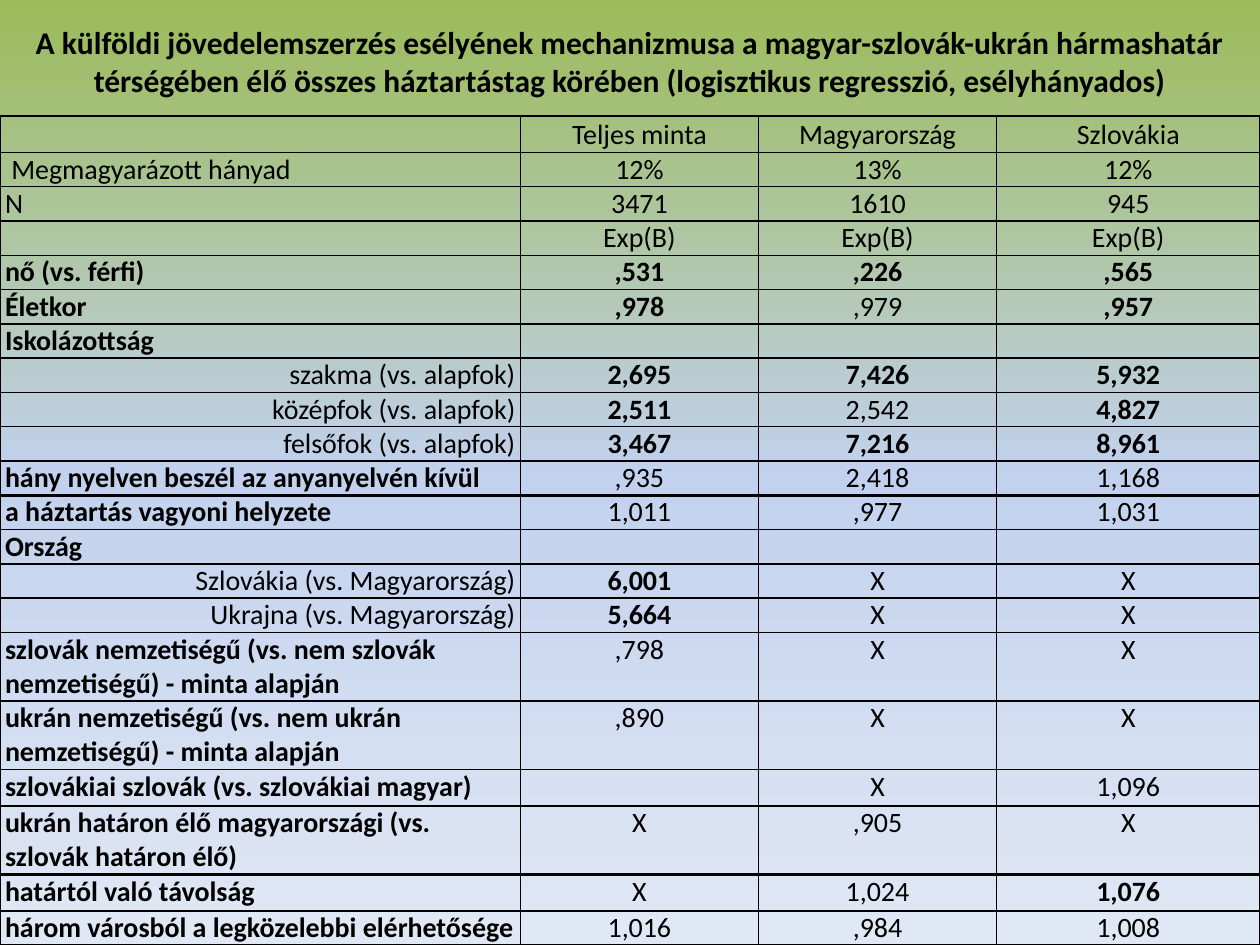
from copy import deepcopy
from lxml.etree import SubElement as Sub
from pptx import Presentation
from pptx.dml.color import RGBColor
from pptx.enum.text import MSO_ANCHOR as Anchor, PP_ALIGN as Align
from pptx.oxml.ns import qn
from pptx.util import Inches, Pt

BLACK = RGBColor(0, 0, 0)
GREEN = RGBColor(0x9B, 0xBB, 0x59)
BLUE = RGBColor(0xC2, 0xD1, 0xED)
PALE = RGBColor(0xE1, 0xE8, 0xF5)
FONT = "Calibri"
WIDE, HIGH = Inches(10), Inches(7.5)
COLS = [0.413, 0.189, 0.189, 0.209]
LINE = 0.27
HEADS = 4
TALL = {0: 0.29, 15: 0.54, 16: 0.54, 17: 0.29, 18: 0.54, 19: 0.29}
THICK = {10, 18}
BOLD, RIGHT = "*", ">"

TITLE = ("A külföldi jövedelemszerzés esélyének mechanizmusa a "
         "magyar-szlovák-ukrán hármashatár térségében élő összes "
         "háztartástag körében (logisztikus regresszió, esélyhányados)")

ROWS = [
    "|Teljes minta|Magyarország|Szlovákia",
    " Megmagyarázott hányad|12%|13%|12%",
    "N|3471|1610|945",
    "|Exp(B)|Exp(B)|Exp(B)",
    "*nő (vs. férfi)|*,531|*,226|*,565",
    "*Életkor|*,978|,979|*,957",
    "*Iskolázottság|||",
    ">szakma (vs. alapfok)|*2,695|*7,426|*5,932",
    ">középfok (vs. alapfok)|*2,511|2,542|*4,827",
    ">felsőfok (vs. alapfok)|*3,467|*7,216|*8,961",
    "*hány nyelven beszél az anyanyelvén kívül|,935|2,418|1,168",
    "*a háztartás vagyoni helyzete|1,011|,977|1,031",
    "*Ország|||",
    ">Szlovákia (vs. Magyarország)|*6,001|X|X",
    ">Ukrajna (vs. Magyarország)|*5,664|X|X",
    "*szlovák nemzetiségű (vs. nem szlovák nemzetiségű) - minta alapján|,798|X|X",
    "*ukrán nemzetiségű (vs. nem ukrán nemzetiségű) - minta alapján|,890|X|X",
    "*szlovákiai szlovák (vs. szlovákiai magyar)||X|1,096",
    "*ukrán határon élő magyarországi (vs. szlovák határon élő)|X|,905|X",
    "*határtól való távolság|X|1,024|*1,076",
    "*három városból a legközelebbi elérhetősége|1,016|,984|1,008",
]


def paint(slide):
    fill = slide.background.fill
    fill.gradient()
    fill.gradient_angle = 270
    stops = slide.element.find(".//" + qn("a:gsLst"))
    stops.append(deepcopy(stops[0]))
    for i, (stop, tint) in enumerate(zip(fill.gradient_stops, (GREEN, BLUE, PALE))):
        stop.position = i / 2
        stop.color.rgb = tint


def style(par, size, bold, align):
    par.alignment = align
    font = par.font
    font.name, font.size, font.bold = FONT, Pt(size), bold
    font.color.rgb = BLACK


def head(slide, x, y, w, h):
    box = slide.shapes.title
    box.left, box.top, box.width, box.height = x, y, w, h
    frame = box.text_frame
    frame.word_wrap = True
    frame.vertical_anchor = Anchor.MIDDLE
    frame.text = TITLE
    style(frame.paragraphs[0], 18, True, Align.CENTER)


def edge(cell, row):
    props = cell._tc.get_or_add_tcPr()
    heavy = {"T": row - 1 in THICK, "B": row in THICK}
    for side in "LRTB":
        wide = Pt(2.25 if heavy.get(side) else 1)
        line = Sub(props, qn("a:ln" + side), w=str(int(wide)))
        Sub(Sub(line, qn("a:solidFill")), qn("a:srgbClr"), val=str(BLACK))
    cell.fill.background()


def write(cell, text, row, col):
    cell.margin_left = cell.margin_right = Inches(0.04)
    cell.margin_top = cell.margin_bottom = 0
    cell.vertical_anchor = Anchor.BOTTOM if row < HEADS else Anchor.TOP
    align = Align.CENTER if col else Align.LEFT
    if text.startswith(RIGHT):
        align = Align.RIGHT
    cell.text = text.lstrip(BOLD + RIGHT)
    par = cell.text_frame.paragraphs[0]
    style(par, 16, text.startswith(BOLD), align)
    if not text:
        Sub(par._p, qn("a:endParaRPr"), sz="1600")


def grid(slide, x, y, w):
    rows = [line.split("|") for line in ROWS]
    highs = [Inches(TALL.get(r, LINE)) for r in range(len(rows))]
    table = slide.shapes.add_table(len(rows), len(COLS), x, y, w, sum(highs)).table
    table.first_row = table.horz_banding = False
    for col, part in zip(table.columns, COLS):
        col.width = int(w * part)
    for r, row in enumerate(rows):
        table.rows[r].height = highs[r]
        for c, text in enumerate(row):
            cell = table.cell(r, c)
            write(cell, text, r, c)
            edge(cell, r)


def main():
    deck = Presentation()
    deck.slide_width, deck.slide_height = WIDE, HIGH
    slide = deck.slides.add_slide(deck.slide_layouts[5])
    paint(slide)
    grid(slide, 0, Inches(0.92), WIDE)
    head(slide, 0, Inches(0.13), WIDE, Inches(0.71))
    deck.save("out.pptx")


if __name__ == "__main__":
    main()
